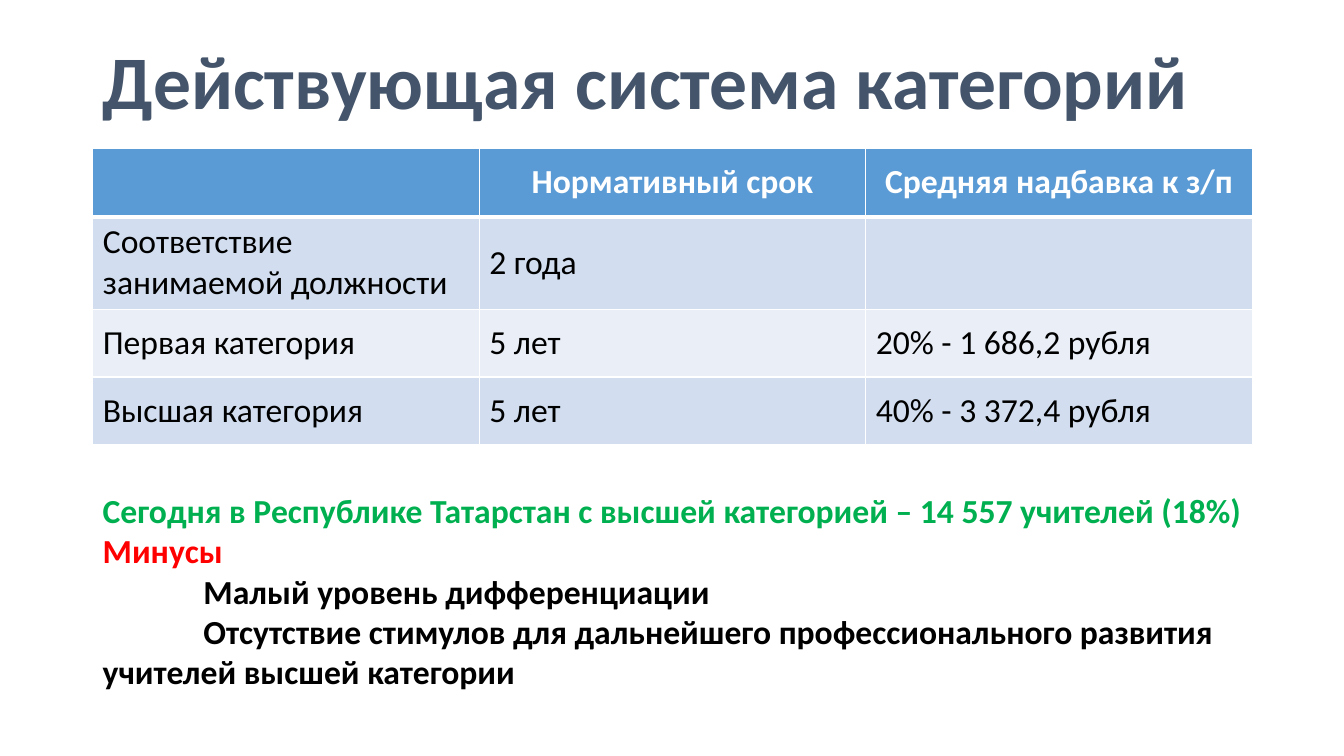
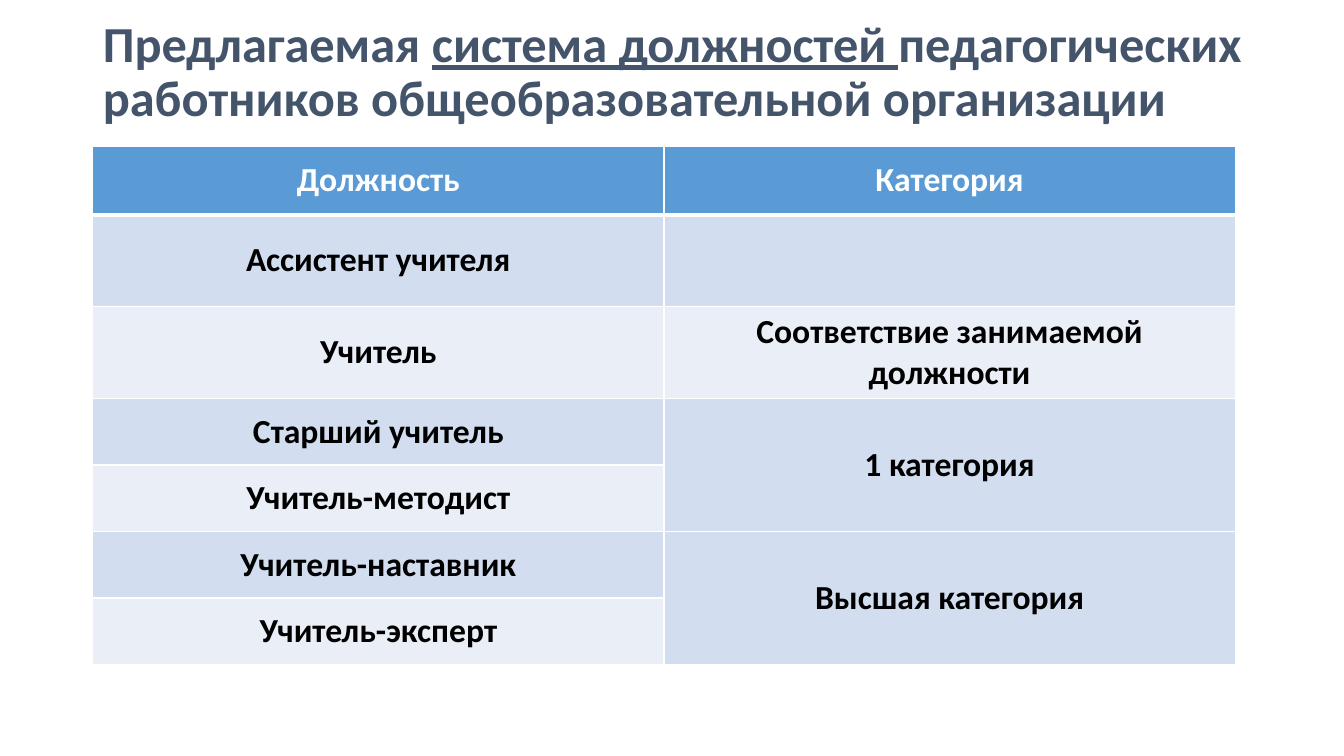
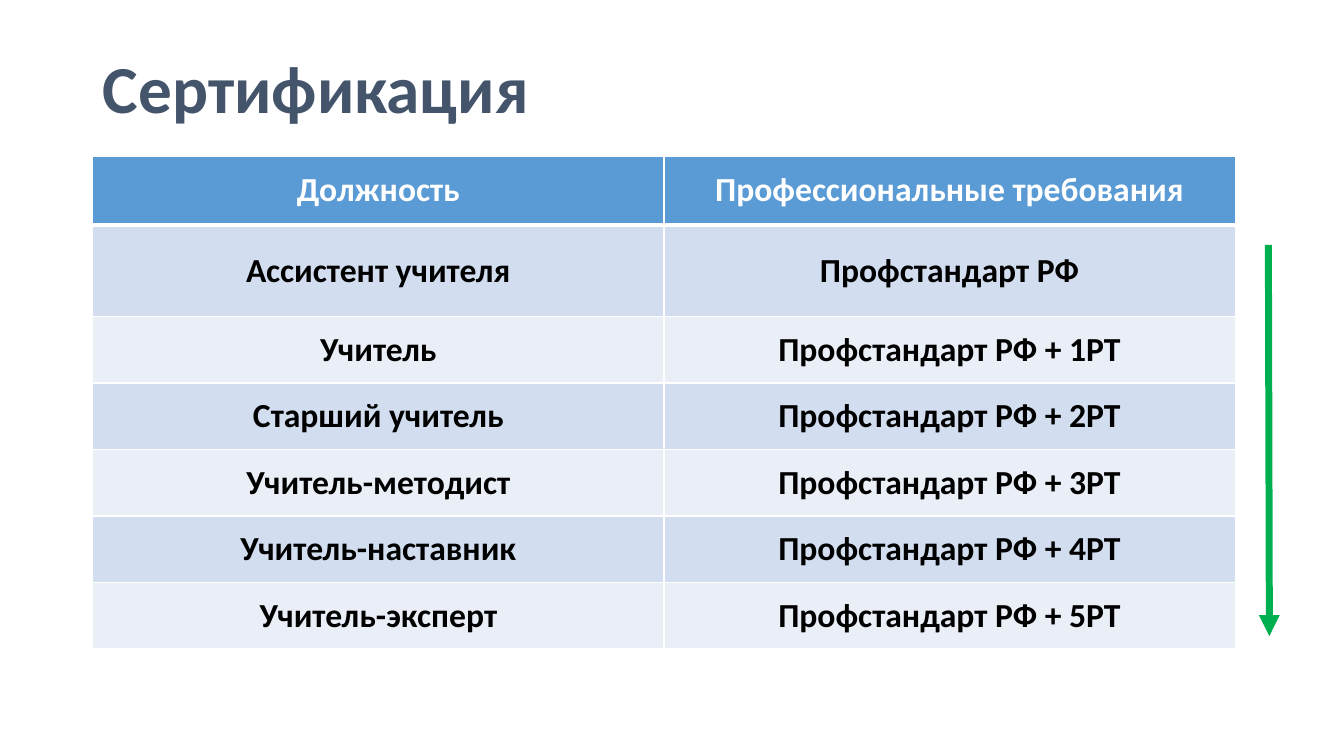
from lxml import etree
from pptx import Presentation
from pptx import util as u
from pptx.dml.color import RGBColor
from pptx.enum import shapes, text
from pptx.oxml import ns

# Shared style
FONT = "Calibri"
SLATE = RGBColor(0x44, 0x54, 0x6A)
BLUE = RGBColor(0x5B, 0x9B, 0xD5)
BANDS = [RGBColor(0xD2, 0xDE, 0xEF), RGBColor(0xEA, 0xEF, 0xF7)]
WHITE = RGBColor(0xFF, 0xFF, 0xFF)
BLACK = RGBColor(0, 0, 0)
GREEN = RGBColor(0, 0xB0, 0x50)
RED = RGBColor(0xFF, 0, 0)

LEFT, WIDTH = 0.92, 11.5
BODY_SIZE = 24
THIN, THICK = 1, 3
POSITIONS = ["Ассистент учителя", "Учитель", "Старший учитель",
             "Учитель-методист", "Учитель-наставник", "Учитель-эксперт"]


def add_span(para, words, size, color, **extra):
    """Add one formatted run to a paragraph."""
    span = para.add_run()
    span.text = words
    span.font.color.rgb = color
    style = {"name": FONT, "size": u.Pt(size), "bold": True, **extra}
    for name, value in style.items():
        setattr(span.font, name, value)


def add_page(deck, spans, size, top, height):
    """Add a title-only slide; spans are (words, underlined) pairs."""
    page = deck.slides.add_slide(deck.slide_layouts[5])
    title = page.shapes.title
    place = {"left": LEFT, "top": top, "width": WIDTH, "height": height}
    for name, value in place.items():
        setattr(title, name, u.Inches(value))
    frame = title.text_frame
    frame.word_wrap = True
    frame.auto_size = text.MSO_AUTO_SIZE.NONE
    frame.vertical_anchor = text.MSO_ANCHOR.MIDDLE
    para = frame.paragraphs[0]
    para.alignment = text.PP_ALIGN.LEFT
    para.line_spacing = 0.9
    for words, underlined in spans:
        add_span(para, words, size, SLATE, underline=underlined)
    return page


def set_borders(cell, widths):
    """Draw white cell borders; widths maps L, R, T, B to points."""
    properties = cell._tc.get_or_add_tcPr()
    for side, width in widths.items():
        line = etree.SubElement(properties, ns.qn("a:ln" + side), w=str(u.Pt(width)))
        fill = etree.SubElement(line, ns.qn("a:solidFill"))
        etree.SubElement(fill, ns.qn("a:srgbClr"), val=str(WHITE))


def add_grid(page, rows, top, width, heights, merges=(), bold=True,
             body_align=text.PP_ALIGN.CENTER):
    """Add a banded table with a blue header; merges are (row, column) pairs
    of cells joined with the one below."""
    columns = len(rows[0])
    frame = page.shapes.add_table(len(rows), columns, u.Inches(LEFT), u.Inches(top),
                                  u.Inches(width), u.Inches(sum(heights)))
    table = frame.table
    for column in table.columns:
        column.width = u.Inches(width / columns)
    for r, (row, height) in enumerate(zip(rows, heights)):
        table.rows[r].height = u.Inches(height)
        header = r == 0
        for c, words in enumerate(row):
            cell = table.cell(r, c)
            set_borders(cell, {"L": THIN, "R": THIN,
                               "T": THICK if r == 1 else THIN,
                               "B": THICK if header else THIN})
            cell.fill.solid()
            cell.fill.fore_color.rgb = BLUE if header else BANDS[(r - 1) % 2]
            cell.vertical_anchor = text.MSO_ANCHOR.MIDDLE
            if words:
                para = cell.text_frame.paragraphs[0]
                para.alignment = text.PP_ALIGN.CENTER if header else body_align
                add_span(para, words, BODY_SIZE, WHITE if header else BLACK,
                         bold=header or bold)
    for r, c in merges:
        table.cell(r, c).merge(table.cell(r + 1, c))


def add_notes_box(page, lines, top, height):
    """Add the text under a table; lines are (words, colour, indent) triples."""
    box = page.shapes.add_textbox(u.Inches(LEFT), u.Inches(top),
                                  u.Inches(WIDTH), u.Inches(height))
    frame = box.text_frame
    frame.word_wrap = True
    for i, (words, color, indent) in enumerate(lines):
        para = frame.add_paragraph() if i else frame.paragraphs[0]
        para._p.get_or_add_pPr().set("indent", str(u.Inches(indent)))
        add_span(para, words, BODY_SIZE, color)


def add_arrow(page, start, end):
    """Add a green arrow between two points."""
    arrow = page.shapes.add_connector(shapes.MSO_CONNECTOR.STRAIGHT,
                                      *(u.Inches(value) for value in start + end))
    arrow.line.color.rgb = GREEN
    arrow.line.width = u.Pt(5)
    etree.SubElement(arrow.line._get_or_add_ln(), ns.qn("a:tailEnd"), type="triangle")
    etree.SubElement(arrow._element.spPr, ns.qn("a:effectLst"))


def current_system(deck):
    page = add_page(deck, [("Действующая система категорий", False)], 54, 0.38, 0.93)
    rows = [["", "Нормативный срок", "Средняя надбавка к з/п"],
            ["Соответствие занимаемой должности", "2 года", ""],
            ["Первая категория", "5 лет", "20% - 1 686,2 рубля"],
            ["Высшая категория", "5 лет", "40% - 3 372,4 рубля"]]
    add_grid(page, rows, 1.47, WIDTH, [0.68, 0.92, 0.67, 0.67], bold=False,
             body_align=text.PP_ALIGN.LEFT)
    add_notes_box(page, [
        ("Сегодня в Республике Татарстан с высшей категорией – 14 557 учителей (18%)",
         GREEN, 0),
        ("Минусы", RED, 0),
        ("Малый уровень дифференциации", BLACK, 1),
        ("Отсутствие стимулов для дальнейшего профессионального развития "
         "учителей высшей категории", BLACK, 1)], 4.81, 2.12)


def proposed_system(deck):
    page = add_page(deck, [("Предлагаемая ", False), ("система должностей ", True),
                           ("педагогических работников общеобразовательной организации",
                            False)], 36, 0, 1.45)
    categories = ["", "Соответствие занимаемой должности", "1 категория", "",
                  "Высшая категория", ""]
    rows = [("Должность", "Категория"), *zip(POSITIONS, categories)]
    add_grid(page, rows, 1.45, 11.33, [0.68, 0.91, 0.91] + [0.66] * 4,
             merges=[(3, 1), (5, 1)])


def certification(deck):
    page = add_page(deck, [("Сертификация", False)], 48, 0.4, 1.02)
    standard = "Профстандарт РФ"
    demands = [standard] + [f"{standard} + {level}РТ" for level in range(1, 6)]
    rows = [("Должность", "Профессиональные требования"), *zip(POSITIONS, demands)]
    add_grid(page, rows, 1.55, 11.33, [0.68, 0.91] + [0.66] * 5)
    add_arrow(page, (12.58, 2.43), (12.59, 6.31))


def main():
    deck = Presentation()
    deck.slide_width, deck.slide_height = u.Inches(13.33), u.Inches(7.5)
    for build in (current_system, proposed_system, certification):
        build(deck)
    deck.save("out.pptx")


if __name__ == "__main__":
    main()
